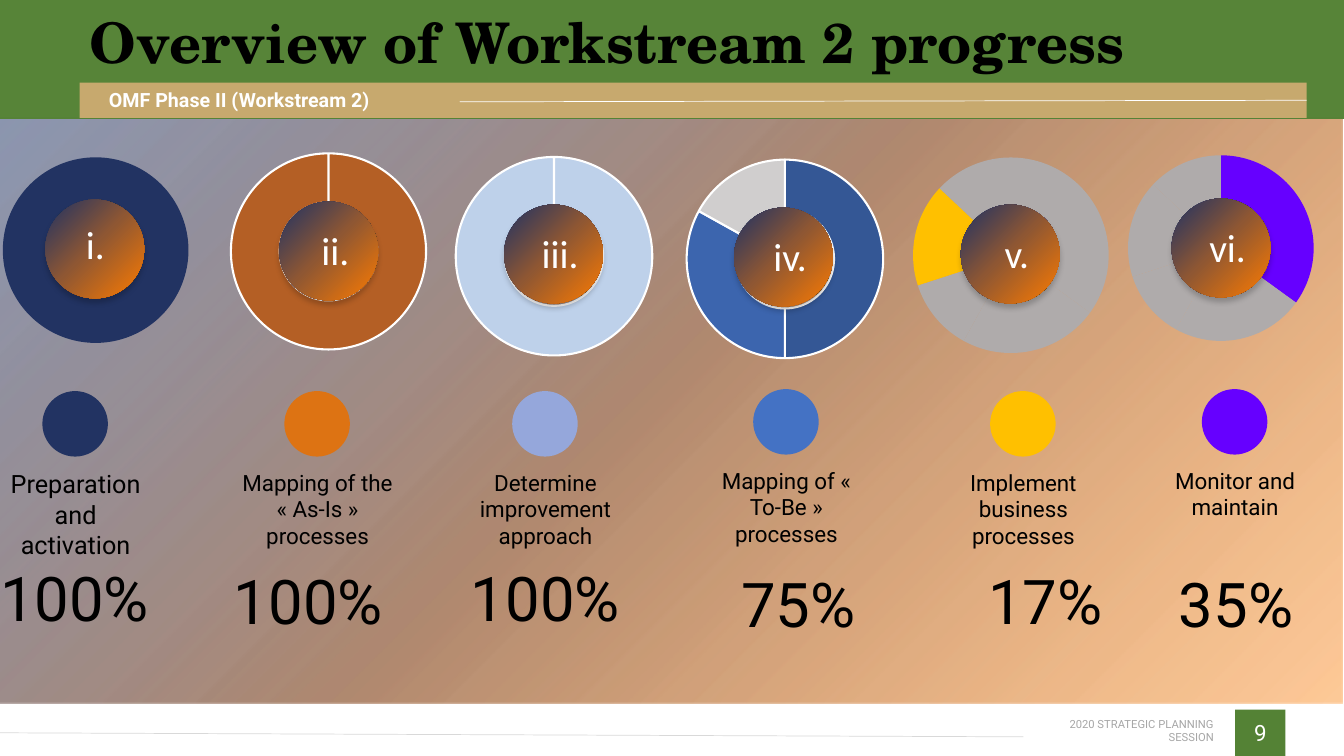
from lxml import etree
from pptx import Presentation
from pptx.chart.data import CategoryChartData
from pptx.dml.color import RGBColor
from pptx.enum.chart import XL_CHART_TYPE
from pptx.enum.shapes import MSO_CONNECTOR, MSO_SHAPE
from pptx.enum.text import MSO_ANCHOR, PP_ALIGN
from pptx.oxml import parse_xml
from pptx.oxml.ns import qn
from pptx.util import Inches, Pt

RECT, OVAL = MSO_SHAPE.RECTANGLE, MSO_SHAPE.OVAL
LINE, RING = MSO_CONNECTOR.STRAIGHT, XL_CHART_TYPE.DOUGHNUT
TOP, MID = MSO_ANCHOR.TOP, MSO_ANCHOR.MIDDLE
LEFT, CENTER, RIGHT = PP_ALIGN.LEFT, PP_ALIGN.CENTER, PP_ALIGN.RIGHT

HEX = {
    "green": "548235", "gold": "C7A96E", "white": "FFFFFF", "black": "000000",
    "rule": "D9D9D9", "note": "A6A6A6", "gray": "AFABAB", "pale": "D0CECE",
    "navy": "223362", "rust": "B45F25", "orange": "DD7313", "sky": "BED1EA",
    "lilac": "95A7DB", "deep": "345795", "royal": "3C65AE", "blue": "4472C4",
    "amber": "FFC000", "violet": "6600FF",
    "flame": "FC7B01", "brown": "8F5733", "night": "1D3164",
}
NS = 'xmlns:a="http://schemas.openxmlformats.org/drawingml/2006/main"'
SPLIT = (35, 23, 12, 17, 13)
STAGES = [
    dict(mark="i.", name="Preparation and activation", done="100%", size=18,
         box=(-0.1, 1.23, 1.97, 2.59), plot=(0.065, 0.032, 0.935, 0.903),
         vals=(100,), hues=("navy",), edge=False, dot="navy",
         disc=(0.55, 0.75), shift=(0.17, 0.16), key=(0.52, 2.65), sum=(0, 4.28)),
    dict(mark="ii.", name="Mapping of the « As-Is » processes", done="100%", size=16,
         box=(2.28, 1.17, 1.97, 2.59), plot=(0, 0.06, 0.988, 0.903),
         vals=(100,), hues=("rust",), edge=True, dot="orange",
         disc=(0.49, 0.83), shift=(0.23, 0.2), key=(0.54, 2.71), sum=(-0.06, 4.37)),
    dict(mark="iii.", name="Determine improvement approach", done="100%", size=16,
         box=(4.51, 1.32, 1.97, 2.59), plot=(0, 0.003, 1, 0.938),
         vals=(100,), hues=("sky",), edge=True, dot="lilac",
         disc=(0.49, 0.71), shift=(0.23, 0.2), key=(0.57, 2.56), sum=(0.06, 4.19)),
    dict(mark="iv.", name="Mapping of « To-Be » processes", done="75%", size=16,
         box=(6.8, 1.23, 1.97, 2.59), plot=(0, 0.052, 1, 0.93),
         vals=(50, 33, 17), hues=("deep", "royal", "pale"), edge=True, dot="blue",
         disc=(0.48, 0.83), shift=(0.23, 0.2), key=(0.67, 2.63), sum=(0.28, 4.34)),
    dict(mark="v.", name="Implement business processes", done="17%", size=16,
         box=(9.04, 1.18, 1.97, 2.69), plot=(0.008, 0.07, 0.985, 0.866),
         vals=SPLIT, hues=("gray", "gray", "gray", "amber", "gray"), edge=False, dot="amber",
         disc=(0.49, 0.85), shift=(0.23, 0.2), key=(0.78, 2.7), sum=(0.49, 4.36)),
    dict(mark="vi.", name="Monitor and maintain", done="35%", size=16,
         box=(11.06, 1.21, 1.97, 2.59), plot=(0.065, 0.032, 0.935, 0.903),
         vals=SPLIT, hues=("violet", "gray", "gray", "gray", "gray"), edge=False, dot="violet",
         disc=(0.56, 0.76), shift=(0.23, 0.2), key=(0.86, 2.65), sum=(0.36, 4.36)),
]


def rgb(hue):
    """Return the named colour."""
    return RGBColor.from_string(HEX[hue])


def inch(box):
    """Turn numbers into lengths."""
    return [Inches(n) for n in box]


def form(slide, kind, box, hue):
    """Add a plain filled shape."""
    shape = slide.shapes.add_shape(kind, *inch(box))
    shape.shadow.inherit = False
    shape.line.fill.background()
    shape.fill.solid()
    shape.fill.fore_color.rgb = rgb(hue)
    return shape


def write(frame, text, size, hue, align=CENTER, font="Roboto", bold=False,
          anchor=TOP, pad=(0, 0)):
    """Put one styled paragraph in a text frame."""
    side, top = inch(pad)
    look = dict(word_wrap=True, vertical_anchor=anchor, margin_left=side,
                margin_right=side, margin_top=top, margin_bottom=top)
    for key, val in look.items():
        setattr(frame, key, val)
    para = frame.paragraphs[0]
    para.alignment = align
    run = para.add_run()
    run.text = text
    for key, val in dict(name=font, size=Pt(size), bold=bold).items():
        setattr(run.font, key, val)
    run.font.color.rgb = rgb(hue)
    return para


def label(slide, box, *args, **style):
    """Add a text box."""
    return write(slide.shapes.add_textbox(*inch(box)).text_frame, *args, **style)


def blend(shape, alphas):
    """Fill a shape with the corner gradient."""
    stops = "".join(
        f'<a:gs pos="{pos}"><a:srgbClr val="{HEX[hue]}"><a:alpha val="{alpha * 1000}"/>'
        f'</a:srgbClr></a:gs>'
        for pos, hue, alpha in zip((0, 52000, 100000), ("flame", "brown", "night"), alphas))
    props = shape.fill._xPr
    old = props.find(qn("a:solidFill"))
    props.replace(old, parse_xml(
        f'<a:gradFill {NS} rotWithShape="1"><a:gsLst>{stops}</a:gsLst><a:path path="circle">'
        '<a:fillToRect l="100000" t="100000"/></a:path>'
        '<a:tileRect r="-100000" b="-100000"/></a:gradFill>'))


def rule(slide, start, end, hue):
    """Add a thin line."""
    line = slide.shapes.add_connector(LINE, *inch(start + end))
    line.line.color.rgb = rgb(hue)
    line.line.width = Pt(0.5)
    etree.SubElement(line._element.spPr, qn("a:effectLst"))
    return line


def ring(slide, box, plot, vals, hues, edge):
    """Add a doughnut chart."""
    data = CategoryChartData()
    data.categories = [str(n + 1) for n in range(len(vals))]
    data.add_series("Series 1", vals)
    chart = slide.shapes.add_chart(RING, *inch(box), data).chart
    chart.has_title = chart.has_legend = False
    chart.font.name, chart.font.size = "Calibri", Pt(10)
    chart.font.color.rgb = rgb("black")
    rings = chart.plots[0]
    rings.has_data_labels = False
    rings.vary_by_categories = True
    for n, hue in enumerate(hues):
        part = rings.series[0].points[n].format
        part.fill.solid()
        part.fill.fore_color.rgb = rgb(hue)
        if edge:
            part.line.color.rgb = rgb("white")
            part.line.width = Pt(1.5)
        else:
            part.line.fill.background()
    root = chart._chartSpace
    root.find(".//" + qn("c:holeSize")).set("val", "54")
    area = root.find(".//" + qn("c:plotArea"))
    for old in area.findall(qn("c:layout")):
        area.remove(old)
    layout = etree.Element(qn("c:layout"))
    spot = etree.SubElement(layout, qn("c:manualLayout"))
    pairs = [("layoutTarget", "inner"), ("xMode", "edge"), ("yMode", "edge"), *zip("xywh", plot)]
    for tag, val in pairs:
        etree.SubElement(spot, qn("c:" + tag)).set("val", str(val))
    area.insert(0, layout)
    clear = etree.Element(qn("c:spPr"))
    etree.SubElement(clear, qn("a:noFill"))
    edges = etree.SubElement(clear, qn("a:ln"))
    etree.SubElement(edges, qn("a:noFill"))
    root.find(qn("c:chart")).addnext(clear)


def stage(slide, box, item):
    """Draw one stage: ring, numeral disc, key dot, name and percentage."""
    left, top = box[:2]
    ring(slide, box, item["plot"], item["vals"], item["hues"], item["edge"])
    x, y = left + item["disc"][0], top + item["disc"][1]
    disc = form(slide, OVAL, (x, y, 0.98, 0.98), "brown")
    blend(disc, (100, 100, 100))
    disc._element.spPr.find(qn("a:effectLst")).append(parse_xml(
        f'<a:outerShdw {NS} blurRad="50800" dist="38100" dir="5400000">'
        '<a:srgbClr val="000000"><a:alpha val="20000"/></a:srgbClr></a:outerShdw>'))
    dx, dy = item["shift"]
    label(slide, (x + dx, y + dy, 0.65, 0.57), item["mark"], 28, "white",
          font="Calibri", pad=(0, 0.05))
    x, y = left + item["key"][0], top + item["key"][1]
    form(slide, OVAL, (x, y, 0.65, 0.65), item["dot"])
    label(slide, (x - 0.45, y + 0.77, 1.56, 0.81), item["name"], item["size"], "black")
    x, y = left + item["sum"][0], top + item["sum"][1]
    label(slide, (x, y, 1.68, 0.84), item["done"], 44, "black", pad=(0, 0.05))


def header(slide, box):
    """Draw the title band with its subtitle bar."""
    left, top, wide, _ = box
    band = form(slide, RECT, box, "green")
    tint = band.fill._xPr.find(qn("a:solidFill"))[0]
    etree.SubElement(tint, qn("a:alpha")).set("val", "98000")
    bar = form(slide, RECT, (left + 0.79, top + 0.82, 12.17, 0.35), "gold")
    label(slide, (left + 1.08, top + 0.87, 3.48, 0.24), "OMF Phase II (Workstream 2)",
          14, "white", align=LEFT, bold=True, anchor=MID)
    line = rule(slide, (left + 4.56, top + 1.01), (left + 12.96, top + 1), "white")
    line.end_connect(bar, 3)
    title = label(slide, (left + 0.79, top, wide - 0.79, 0.9),
                  "Overview of Workstream 2 progress", 40, "black", align=LEFT,
                  font="TeX Gyre Schola", bold=True, anchor=MID, pad=(0.1, 0.05))
    title.line_spacing = 0.9


def footer(slide, box):
    """Draw the footer line, its note and the page number."""
    left, top, _, high = box
    page = form(slide, RECT, (left + 12.25, top, 0.5, high), "green")
    write(page.text_frame, "9", 16, "white", anchor=MID)
    label(slide, (left + 10.15, top + 0.14, 1.89, 0.13), "2020 STRATEGIC PLANNING SESSION",
          8, "note", align=RIGHT, anchor=MID)
    rule(slide, (left + 10.15, top + 0.27), (left, top + 0.23), "rule")


def main():
    """Build the slide and save it."""
    deck = Presentation()
    deck.slide_width, deck.slide_height = inch((13.33, 7.5))
    slide = deck.slides.add_slide(deck.slide_layouts[6])
    footer(slide, (0, 7.04, 13.33, 0.46))
    blend(form(slide, RECT, (-0.01, 1.17, 13.33, 5.81), "brown"), (40, 70, 50))
    header(slide, (0, 0, 13.33, 1.18))
    for item in STAGES:
        stage(slide, item["box"], item)
    deck.save("out.pptx")


if __name__ == "__main__":
    main()
